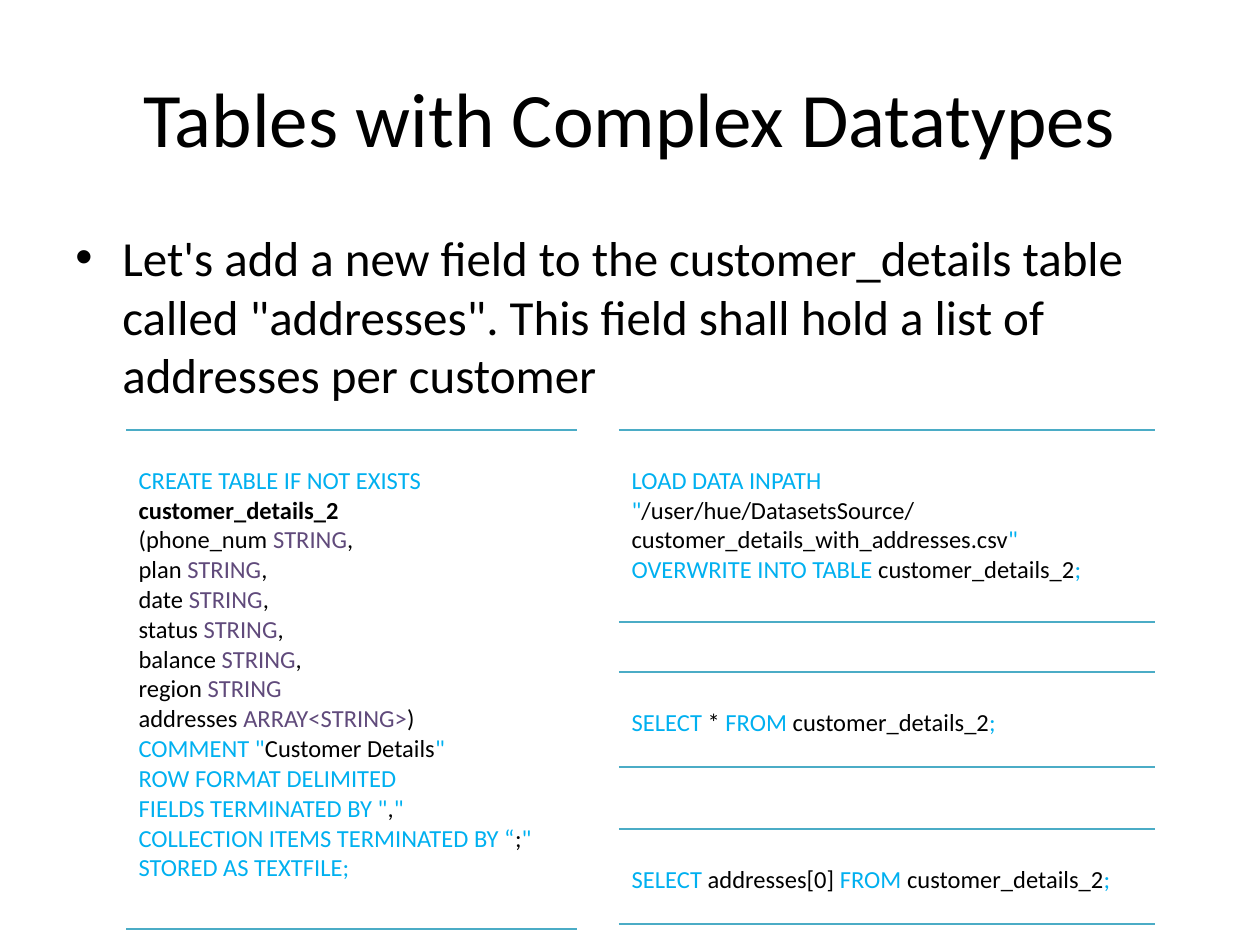
from pptx import Presentation
from pptx.dml.color import RGBColor
from pptx.enum.text import MSO_ANCHOR, PP_ALIGN
from pptx.oxml import parse_xml
from pptx.oxml.ns import nsdecls
from pptx.util import Emu, Pt

INK = RGBColor(0x00, 0x00, 0x00)
KEY = RGBColor(0x00, 0xB0, 0xF0)
TYPE = RGBColor(0x60, 0x4A, 0x7B)
RULE = RGBColor(0x4B, 0xAC, 0xC6)
SQL = (KEY, INK)
FIELD = (INK, TYPE)


def px(size):
    return Emu(round(size * 914400 / 126))


class Deck:
    font = "Calibri"

    def __init__(self, wide, high):
        self.file = Presentation()
        self.file.slide_width, self.file.slide_height = px(wide), px(high)
        self.slide = self.file.slides.add_slide(self.file.slide_layouts[6])

    def style(self, run, size, color):
        run.font.name = self.font
        run.font.size = Pt(size)
        run.font.color.rgb = color

    def text(self, box, words, size, anchor=MSO_ANCHOR.TOP):
        frame = self.slide.shapes.add_textbox(*map(px, box)).text_frame
        frame.word_wrap = True
        frame.vertical_anchor = anchor
        frame.text = words
        para = frame.paragraphs[0]
        self.style(para.runs[0], size, INK)
        return para

    def title(self, box, words):
        para = self.text(box, words, 44, MSO_ANCHOR.MIDDLE)
        para.alignment = PP_ALIGN.CENTER

    def bullet(self, box, words):
        para = self.text(box, words, 28)
        para.space_before = Pt(1.5)
        props = para._p.get_or_add_pPr()
        props.set("marL", str(px(47)))
        props.set("indent", str(-px(47)))
        props.append(parse_xml(f'<a:buFont {nsdecls("a")} typeface="Arial"/>'))
        props.append(parse_xml(f'<a:buChar {nsdecls("a")} char="•"/>'))

    def border(self, cell):
        props = cell._tc.get_or_add_tcPr()
        line = f'<a:solidFill><a:srgbClr val="{RULE}"/></a:solidFill>'
        sides = {"L": "<a:noFill/>", "R": "<a:noFill/>", "T": line, "B": line}
        for spot, (side, fill) in enumerate(sides.items()):
            xml = f'<a:ln{side} {nsdecls("a")} w="{Pt(1)}">{fill}</a:ln{side}>'
            props.insert(spot, parse_xml(xml))

    def code(self, box, lines):
        table = self.slide.shapes.add_table(1, 1, *map(px, box)).table
        table.first_row = table.horz_banding = False
        cell = table.cell(0, 0)
        cell.fill.background()
        self.border(cell)
        cell.margin_top = px(36)
        frame = cell.text_frame
        for row, (colors, line) in enumerate(lines):
            para = frame.add_paragraph() if row else frame.paragraphs[0]
            for spot, part in enumerate(line.split("|")):
                if part:
                    run = para.add_run()
                    run.text = part
                    self.style(run, 14, colors[spot % 2])
        return frame


def main():
    deck = Deck(1260, 945)
    deck.title((63, 38, 1134, 158), "Tables with Complex Datatypes")
    deck.bullet(
        (63, 221, 1155, 624),
        "Let's add a new field to the customer_details table called "
        "\"addresses\". This field shall hold a list of addresses per customer",
    )

    names = ["plan", "date", "status", "balance"]
    create = deck.code((126, 430, 451, 499), [
        (SQL, "CREATE TABLE IF NOT EXISTS"),
        (SQL, "|customer_details_2"),
        (FIELD, "(phone_num |STRING|,"),
        *((FIELD, f"{name} |STRING|,") for name in names),
        (FIELD, "region |STRING"),
        (FIELD, "addresses |ARRAY<STRING>|)"),
        (SQL, 'COMMENT "|Customer Details|"'),
        (SQL, "ROW FORMAT DELIMITED"),
        (SQL, 'FIELDS TERMINATED BY "|,|"'),
        (SQL, 'COLLECTION ITEMS TERMINATED BY “|;|"'),
        (SQL, "STORED AS TEXTFILE;"),
    ])
    create.paragraphs[1].runs[0].font.bold = True

    deck.code((619, 430, 536, 192), [
        (SQL, "LOAD DATA INPATH"),
        (SQL, '"|/user/hue/DatasetsSource/'),
        (SQL, '|customer_details_with_addresses.csv|"'),
        (SQL, "OVERWRITE INTO TABLE |customer_details_2|;"),
    ])
    for top, what in ((672, "* "), (829, "addresses[0] ")):
        query = f"SELECT |{what}|FROM |customer_details_2|;"
        deck.code((619, top, 536, 95), [(SQL, query)])

    deck.file.save("out.pptx")


if __name__ == "__main__":
    main()
